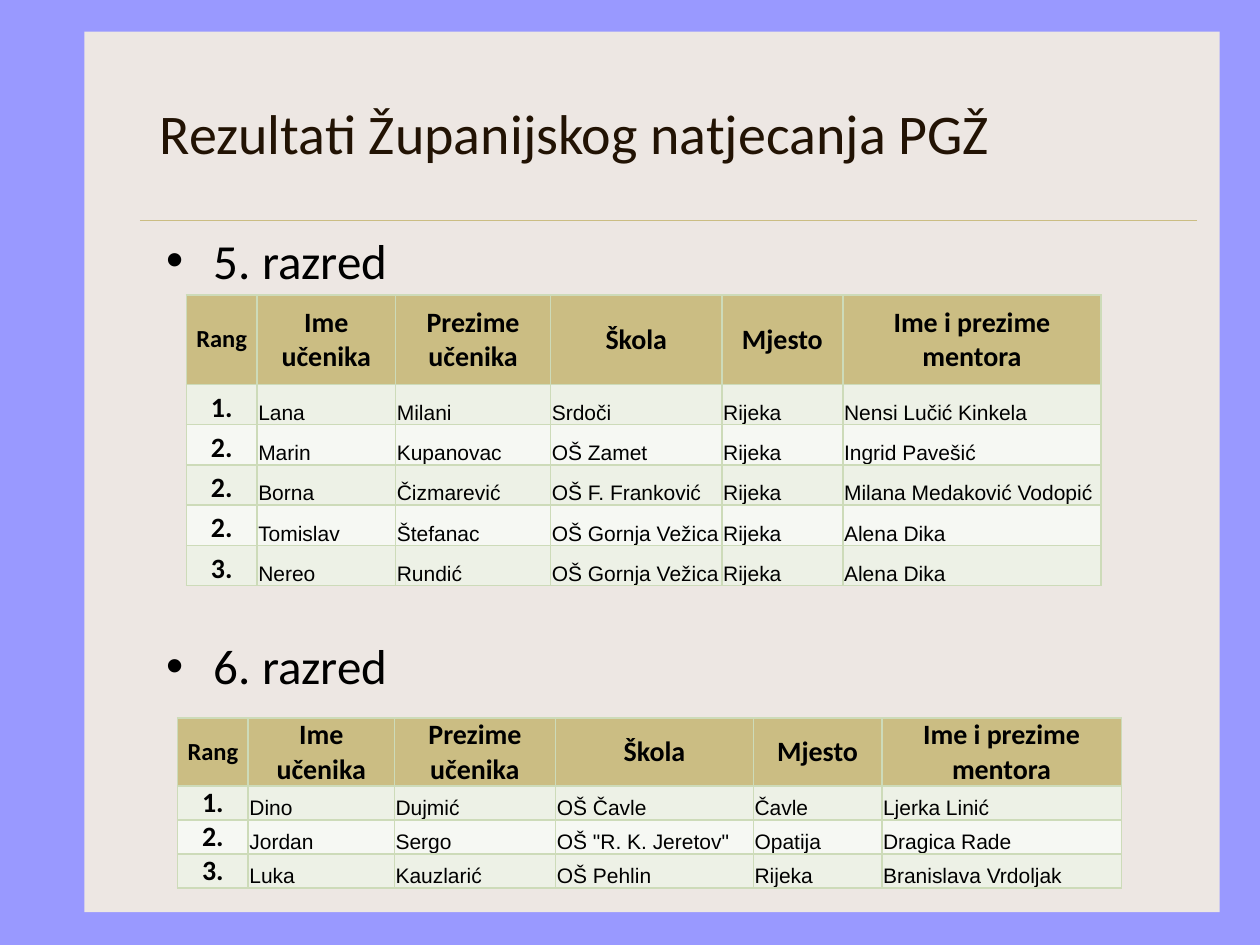
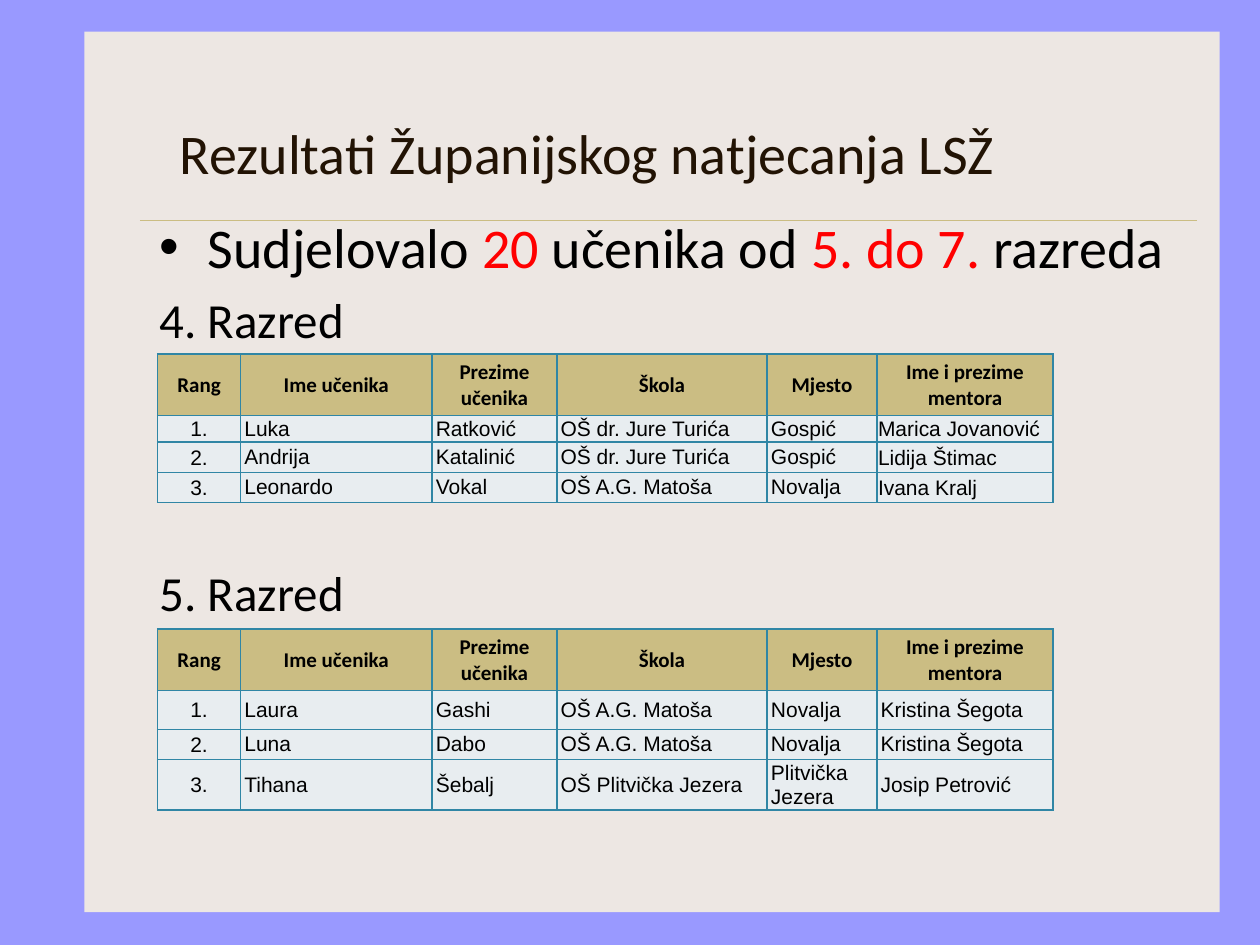
from dataclasses import dataclass

import pptx
import pptx.dml.color
import pptx.enum.shapes
import pptx.enum.text
import pptx.oxml
import pptx.oxml.ns
import pptx.util
from pptx.util import Inches, Pt

ANCHOR = pptx.enum.text.MSO_ANCHOR
ALIGN = pptx.enum.text.PP_ALIGN

FRAME, PAPER, SAND = "9999FF", "EDE7E3", "CBBD83"
TITLE_BROWN, BLACK, RED = "221304", "000000", "FF0000"
HEADINGS = ("Rang", "Ime učenika", "Prezime učenika", "Škola", "Mjesto",
            "Ime i prezime mentora")


@dataclass(frozen=True)
class TextStyle:
    size: float
    color: str = BLACK
    font: str = "Calibri"
    bold: bool = False


@dataclass(frozen=True)
class Line:
    """One paragraph: its (text, style) runs, bullet and space before in points."""
    runs: tuple[tuple[str, TextStyle], ...]
    bullet: bool = False
    before: float = 0


@dataclass(frozen=True)
class CellStyle:
    """Text style with alignment and left, top, right, bottom insets in inches."""
    text: TextStyle
    insets: tuple[float, float, float, float]
    anchor: ANCHOR = ANCHOR.MIDDLE
    align: ALIGN = ALIGN.LEFT


@dataclass(frozen=True)
class TableLook:
    border: str
    bands: tuple[str, ...]
    rank_heading: CellStyle
    heading: CellStyle
    rank: CellStyle
    entry: CellStyle


@dataclass(frozen=True)
class Ranking:
    left: float
    top: float
    columns: tuple[float, ...]
    heights: tuple[float, ...]
    look: TableLook
    results: tuple[tuple[str, ...], ...]
    mentor: CellStyle | None = None


TITLE = TextStyle(32, TITLE_BROWN)
GRADE = TextStyle(28)
SUMMARY, SUMMARY_RED = TextStyle(32), TextStyle(32, RED)
ENTRY_TEXT = TextStyle(12, font="Arial")
WIDE, SLIM, NARROW = (0.07, 0, 0.07, 0), (0.03, 0, 0.03, 0), (0.01, 0.01, 0.01, 0)

GREEN_LOOK = TableLook(
    border="CDDBB9",
    bands=("EDF1E6", "F6F8F3"),
    rank_heading=CellStyle(TextStyle(14, bold=True), WIDE, align=ALIGN.CENTER),
    heading=CellStyle(TextStyle(16, bold=True), WIDE, align=ALIGN.CENTER),
    rank=CellStyle(TextStyle(16, bold=True), WIDE, ANCHOR.BOTTOM, ALIGN.CENTER),
    entry=CellStyle(ENTRY_TEXT, NARROW, ANCHOR.BOTTOM),
)
BLUE_HEADING = CellStyle(TextStyle(12, bold=True), NARROW, align=ALIGN.CENTER)
BLUE_LOOK = TableLook(
    border="3086A5",
    bands=("E8EDF0",),
    rank_heading=BLUE_HEADING,
    heading=BLUE_HEADING,
    rank=CellStyle(ENTRY_TEXT, NARROW, align=ALIGN.CENTER),
    entry=CellStyle(ENTRY_TEXT, SLIM),
)
LSZ_COLUMNS = (0.66, 1.52, 0.99, 1.67, 0.87, 1.4)

PGZ_GRADE_5 = Ranking(
    1.48, 2.34, (0.56, 1.1, 1.23, 1.36, 0.96, 2.05), (0.71,) + (0.32,) * 5, GREEN_LOOK,
    (
        ("1.", "Lana", "Milani", "Srdoči", "Rijeka", "Nensi Lučić Kinkela"),
        ("2.", "Marin", "Kupanovac", "OŠ Zamet", "Rijeka", "Ingrid Pavešić"),
        ("2.", "Borna", "Čizmarević", "OŠ F. Franković", "Rijeka", "Milana Medaković Vodopić"),
        ("2.", "Tomislav", "Štefanac", "OŠ Gornja Vežica", "Rijeka", "Alena Dika"),
        ("3.", "Nereo", "Rundić", "OŠ Gornja Vežica", "Rijeka", "Alena Dika"),
    ),
)
PGZ_GRADE_6 = Ranking(
    1.41, 5.7, (0.56, 1.16, 1.28, 1.57, 1.02, 1.9), (0.54,) + (0.27,) * 3, GREEN_LOOK,
    (
        ("1.", "Dino", "Dujmić", "OŠ Čavle", "Čavle", "Ljerka Linić"),
        ("2.", "Jordan", "Sergo", 'OŠ "R. K. Jeretov"', "Opatija", "Dragica Rade"),
        ("3.", "Luka", "Kauzlarić", "OŠ Pehlin", "Rijeka", "Branislava Vrdoljak"),
    ),
)
LSZ_GRADE_4 = Ranking(
    1.25, 2.81, LSZ_COLUMNS, (0.49, 0.21, 0.24, 0.24), BLUE_LOOK,
    (
        ("1.", "Luka", "Ratković", "OŠ dr. Jure Turića", "Gospić", "Marica Jovanović"),
        ("2.", "Andrija", "Katalinić", "OŠ dr. Jure Turića", "Gospić", "Lidija Štimac"),
        ("3.", "Leonardo", "Vokal", "OŠ A.G. Matoša", "Novalja", "Ivana Kralj"),
    ),
    mentor=CellStyle(ENTRY_TEXT, NARROW),
)
LSZ_GRADE_5 = Ranking(
    1.25, 4.99, LSZ_COLUMNS, (0.49, 0.31, 0.24, 0.37), BLUE_LOOK,
    (
        ("1.", "Laura", "Gashi", "OŠ A.G. Matoša", "Novalja", "Kristina Šegota"),
        ("2.", "Luna", "Dabo", "OŠ A.G. Matoša", "Novalja", "Kristina Šegota"),
        ("3.", "Tihana", "Šebalj", "OŠ Plitvička Jezera", "Plitvička Jezera", "Josip Petrović"),
    ),
)


def rgb(color: str) -> pptx.dml.color.RGBColor:
    return pptx.dml.color.RGBColor.from_string(color)


def paint(fill, color: str) -> None:
    fill.solid()
    fill.fore_color.rgb = rgb(color)


def element(xml: str):
    """Parse a drawing element written with the a: prefix."""
    tag, rest = xml[:-2].partition(" ")[::2] if xml.endswith("/>") else (None, None)
    if tag is None:
        head, tail = xml.split(">", 1)
        return pptx.oxml.parse_xml(f"{head} {pptx.oxml.ns.nsdecls('a')}>{tail}")
    return pptx.oxml.parse_xml(f"{tag} {pptx.oxml.ns.nsdecls('a')} {rest}/>")


def add_run(paragraph, text: str, style: TextStyle) -> None:
    run = paragraph.add_run()
    run.text = text
    run.font.name = style.font
    run.font.size = Pt(style.size)
    run.font.bold = style.bold
    run.font.color.rgb = rgb(style.color)


def add_text(slide, left: float, top: float, width: float, height: float,
             lines: tuple[Line, ...], anchor: ANCHOR = ANCHOR.TOP) -> None:
    box = slide.shapes.add_textbox(Inches(left), Inches(top), Inches(width), Inches(height))
    frame = box.text_frame
    frame.word_wrap = True
    frame.vertical_anchor = anchor
    for index, line in enumerate(lines):
        paragraph = frame.add_paragraph() if index else frame.paragraphs[0]
        if line.bullet:
            properties = paragraph._p.get_or_add_pPr()
            properties.set("marL", str(Inches(0.38)))
            properties.set("indent", str(-Inches(0.38)))
            properties.append(element('<a:buFont typeface="Arial"/>'))
            properties.append(element('<a:buChar char="•"/>'))
        if index:
            paragraph.space_before = Pt(line.before)
        for text, style in line.runs:
            add_run(paragraph, text, style)


def fill_cell(cell, text: str, style: CellStyle, background: str, border: str) -> None:
    (cell.margin_left, cell.margin_top,
     cell.margin_right, cell.margin_bottom) = map(Inches, style.insets)
    cell.vertical_anchor = style.anchor
    paint(cell.fill, background)
    for index, side in enumerate(("lnL", "lnR", "lnT", "lnB")):
        edge = element(f'<a:{side} w="{Pt(1)}"><a:solidFill><a:srgbClr val="{border}"/>'
                       f'</a:solidFill></a:{side}>')
        cell._tc.tcPr.insert(index, edge)
    paragraph = cell.text_frame.paragraphs[0]
    paragraph.alignment = style.align
    add_run(paragraph, text, style.text)


def add_ranking(slide, ranking: Ranking) -> None:
    look = ranking.look
    rows = (HEADINGS,) + ranking.results
    table = slide.shapes.add_table(
        len(rows), len(HEADINGS), Inches(ranking.left), Inches(ranking.top),
        Inches(sum(ranking.columns)), Inches(sum(ranking.heights))).table
    table.first_row = table.horz_banding = False
    for column, width in zip(table.columns, ranking.columns):
        column.width = Inches(width)
    for row, height in zip(table.rows, ranking.heights):
        row.height = Inches(height)

    heading_styles = [look.rank_heading] + [look.heading] * 5
    result_styles = [look.rank] + [look.entry] * 4 + [ranking.mentor or look.entry]
    for r, texts in enumerate(rows):
        styles = result_styles if r else heading_styles
        background = look.bands[(r - 1) % len(look.bands)] if r else SAND
        for c, (text, style) in enumerate(zip(texts, styles)):
            fill_cell(table.cell(r, c), text, style, background, look.border)


def add_results_slide(deck, title: str, title_left: float, title_top: float):
    """Add a slide with the shared frame, paper, rule and title."""
    slide = deck.slides.add_slide(deck.slide_layouts[6])
    paint(slide.background.fill, FRAME)
    paper = slide.shapes.add_shape(
        pptx.enum.shapes.MSO_SHAPE.RECTANGLE,
        Inches(0.67), Inches(0.25), Inches(9.01), Inches(6.99))
    paper.shadow.inherit = False
    paint(paper.fill, PAPER)
    paper.line.fill.background()
    rule = slide.shapes.add_connector(
        pptx.enum.shapes.MSO_CONNECTOR.STRAIGHT,
        Inches(1.11), Inches(1.75), Inches(9.5), Inches(1.75))
    rule.line.color.rgb = rgb(SAND)
    rule.line.width = Pt(0.25)
    rule._element.spPr.append(element("<a:effectLst/>"))
    add_text(slide, title_left, title_top, 8.33, 1.25,
             (Line(((title, TITLE),)),), ANCHOR.MIDDLE)
    return slide


def add_pgz_slide(deck) -> None:
    slide = add_results_slide(deck, "Rezultati Županijskog natjecanja PGŽ", 1.17, 0.42)
    add_text(slide, 1.22, 1.78, 8.33, 5.28, (
        Line((("5. razred", GRADE),), bullet=True),
        Line((("6. razred", GRADE),), bullet=True, before=198),
    ))
    add_ranking(slide, PGZ_GRADE_5)
    add_ranking(slide, PGZ_GRADE_6)


def add_lsz_slide(deck) -> None:
    slide = add_results_slide(deck, "Rezultati Županijskog natjecanja LSŽ", 1.33, 0.58)
    add_text(slide, 1.17, 1.64, 8.33, 4.78, (
        Line((("Sudjelovalo ", SUMMARY), ("20", SUMMARY_RED), (" učenika od ", SUMMARY),
              ("5. do 7. ", SUMMARY_RED), ("razreda", SUMMARY)), bullet=True),
        Line((("4. Razred", GRADE),), before=5.6),
        Line((("5. Razred", GRADE),), before=122),
    ))
    add_ranking(slide, LSZ_GRADE_4)
    add_ranking(slide, LSZ_GRADE_5)


def main() -> None:
    deck = pptx.Presentation()
    deck.slide_width, deck.slide_height = Inches(10), Inches(7.5)
    add_pgz_slide(deck)
    add_lsz_slide(deck)
    deck.save("out.pptx")


if __name__ == "__main__":
    main()
